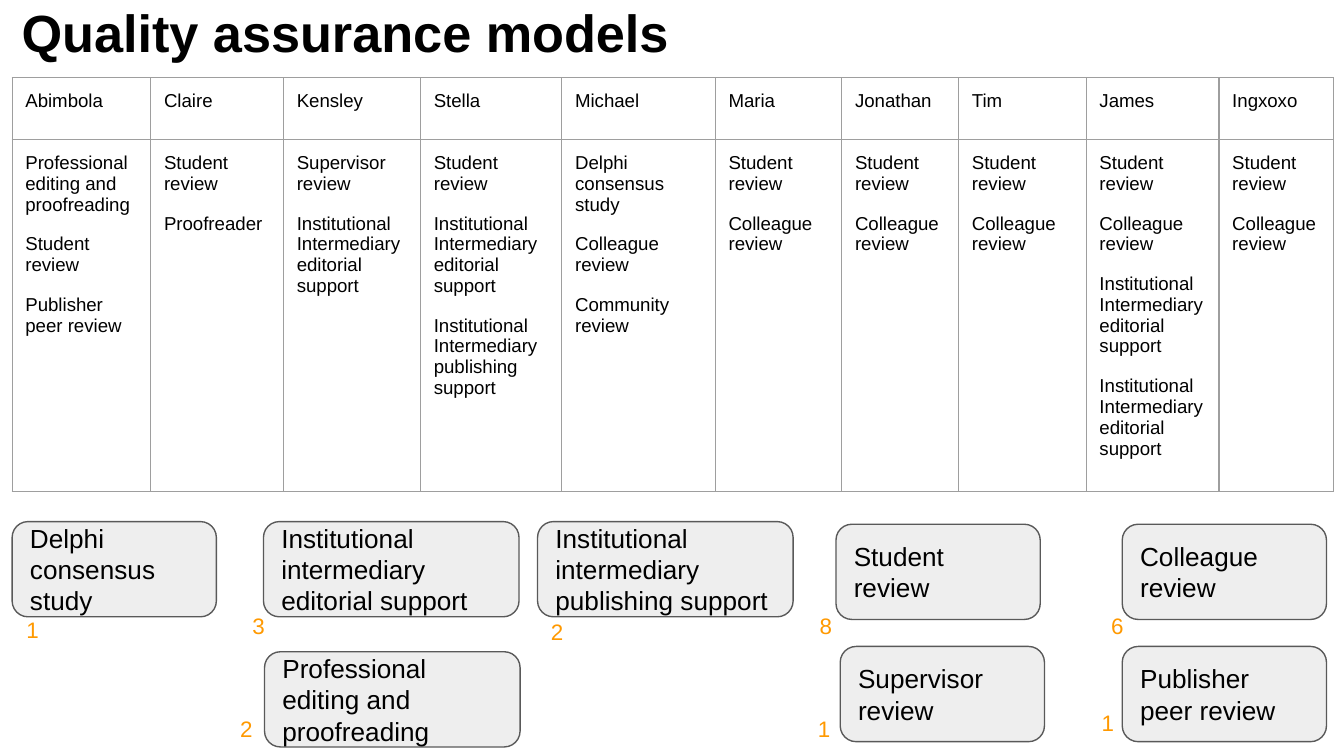
from lxml import etree
from pptx import Presentation
from pptx.dml.color import RGBColor
from pptx.enum import shapes, text
from pptx.oxml import ns
from pptx.util import Cm, Pt

FONT = "Arial"
BLACK, ORANGE, GREY = "000000", "FF9900", "9E9E9E"
INSET = Cm(0.25)
NARROW, WIDE = 3.86, 4.83

STUDENT, COLLEAGUE = "Student review", "Colleague review"
EDITORIAL = "Institutional Intermediary editorial support"
PUBLISHING = "Institutional Intermediary publishing support"

# Name, column width in cm, review models
PEOPLE = [
    ("Abimbola", 2.62, ["Professional editing and proofreading", STUDENT, "Publisher peer review"]),
    ("Claire", 2.51, [STUDENT, "Proofreader"]),
    ("Kensley", 2.59, ["Supervisor review", EDITORIAL]),
    ("Stella", 2.67, [STUDENT, EDITORIAL, PUBLISHING]),
    ("Michael", 2.9, ["Delphi consensus study", COLLEAGUE, "Community review"]),
    ("Maria", 2.39, [STUDENT, COLLEAGUE]),
    ("Jonathan", 2.21, [STUDENT, COLLEAGUE]),
    ("Tim", 2.41, [STUDENT, COLLEAGUE]),
    ("James", 2.51, [STUDENT, COLLEAGUE, EDITORIAL, EDITORIAL]),
    ("Ingxoxo", 2.16, [STUDENT, COLLEAGUE]),
]

# Model, left, top and width of its box, then its count with left and top
MODELS = [
    ("Delphi consensus study", 0.23, 9.86, NARROW, "1", 0.25, 11.4),
    ("Institutional intermediary editorial support", 4.98, 9.86, WIDE, "3", 4.52, 11.33),
    ("Institutional intermediary publishing support", 10.16, 9.86, WIDE, "2", 10.16, 11.43),
    (STUDENT, 15.8, 9.91, NARROW, "8", 15.24, 11.33),
    (COLLEAGUE, 21.21, 9.91, NARROW, "6", 20.75, 11.33),
    ("Professional editing and proofreading", 5, 12.32, WIDE, "2", 4.29, 13.26),
    ("Supervisor review", 15.88, 12.22, NARROW, "1", 15.21, 13.26),
    ("Publisher peer review", 21.21, 12.22, NARROW, "1", 20.57, 13.16),
]


def color(value):
    return RGBColor.from_string(value)


def write(frame, lines, size, shade=BLACK, bold=False, gap=0):
    """Put one paragraph per line in the frame, with a gap between them."""
    frame.word_wrap = True
    for number, line in enumerate(lines):
        para = frame.add_paragraph() if number else frame.paragraphs[0]
        para.alignment = text.PP_ALIGN.LEFT
        if number:
            para.space_before = Pt(gap)
        span = para.add_run()
        span.text = line
        span.font.name = FONT
        span.font.size = Pt(size)
        span.font.bold = bold
        span.font.color.rgb = color(shade)


def set_margins(item, across=INSET, down=INSET):
    item.margin_left = item.margin_right = across
    item.margin_top = item.margin_bottom = down


def add_title(page, title):
    box = page.shapes.add_textbox(Cm(0.23), Cm(-0.71), Cm(21.89), Cm(2.77))
    frame = box.text_frame
    frame.vertical_anchor = text.MSO_ANCHOR.MIDDLE
    set_margins(frame, Cm(0.18), Cm(0.1))
    write(frame, [title], 28, bold=True)
    frame.paragraphs[0].line_spacing = 0.9


def add_borders(cell):
    properties = cell._tc.get_or_add_tcPr()
    for position, side in enumerate(("a:lnL", "a:lnR", "a:lnT", "a:lnB")):
        line = etree.Element(ns.qn(side), w=str(Pt(0.75)))
        fill = etree.SubElement(line, ns.qn("a:solidFill"))
        etree.SubElement(fill, ns.qn("a:srgbClr"), val=GREY)
        properties.insert(position, line)


def fill_cell(cell, lines):
    set_margins(cell)
    cell.fill.background()
    add_borders(cell)
    write(cell.text_frame, lines, 10, gap=10)


def add_people_table(page):
    heights = (1.17, 6.29)
    total = sum(width for _, width, _ in PEOPLE)
    table = page.shapes.add_table(
        2, len(PEOPLE), Cm(0.23), Cm(1.47), Cm(total), Cm(sum(heights))
    ).table
    table.first_row = table.horz_banding = False
    for row, height in zip(table.rows, heights):
        row.height = Cm(height)
    for column, (name, width, models) in enumerate(PEOPLE):
        table.columns[column].width = Cm(width)
        fill_cell(table.cell(0, column), [name])
        fill_cell(table.cell(1, column), models)


def add_model(page, name, left, top, width):
    box = page.shapes.add_shape(
        shapes.MSO_SHAPE.FLOWCHART_ALTERNATE_PROCESS,
        Cm(left), Cm(top), Cm(width), Cm(1.8),
    )
    box.shadow.inherit = False
    box.fill.solid()
    box.fill.fore_color.rgb = color("EEEEEE")
    box.line.color.rgb = color("595959")
    box.line.width = Pt(0.75)
    box.text_frame.vertical_anchor = text.MSO_ANCHOR.MIDDLE
    set_margins(box.text_frame)
    write(box.text_frame, [name], 14)


def add_count(page, count, left, top):
    box = page.shapes.add_textbox(Cm(left), Cm(top), Cm(0.84), Cm(0.86))
    set_margins(box.text_frame)
    write(box.text_frame, [count], 12, ORANGE)


def main():
    deck = Presentation()
    deck.slide_width, deck.slide_height = Cm(25.4), Cm(14.29)
    page = deck.slides.add_slide(deck.slide_layouts[6])
    add_title(page, "Quality assurance models")
    add_people_table(page)
    for name, left, top, width, count, count_left, count_top in MODELS:
        add_model(page, name, left, top, width)
        add_count(page, count, count_left, count_top)
    deck.save("out.pptx")


if __name__ == "__main__":
    main()
